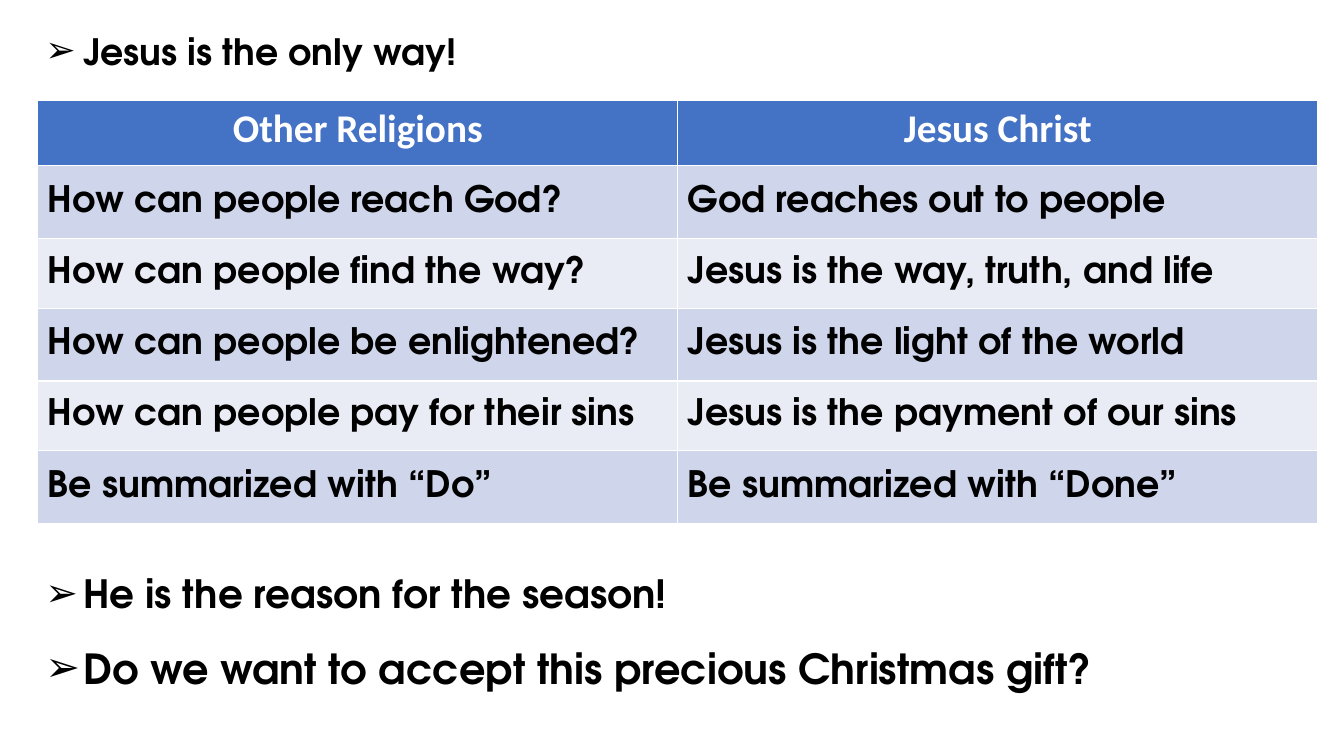
from lxml import etree
from pptx import Presentation
from pptx.dml.color import RGBColor
from pptx.enum.text import MSO_ANCHOR, MSO_AUTO_SIZE, PP_ALIGN
from pptx.oxml.ns import qn
from pptx.util import Cm, Pt

MIDDLE, TOP = MSO_ANCHOR.MIDDLE, MSO_ANCHOR.TOP
CENTER, LEFT = PP_ALIGN.CENTER, PP_ALIGN.LEFT
NO_FIT = MSO_AUTO_SIZE.NONE
HEAD_FONT, BODY_FONT = "Calibri", "TeX Gyre Adventor"
COLORS = {
    "head": "4472C4",
    "odd": "CFD5EA",
    "even": "E9EBF5",
    "white": "FFFFFF",
    "black": "000000",
}
# Text, size and space before, in points
POINTS = [
    ("Jesus is the only way!", 25.9, 10),
    ("He is the reason for the season!", 27.8, 362),
    ("Do we want to accept this precious Christmas gift?", 29.6, 26),
]
ROWS = [
    ("Other Religions", "Jesus Christ"),
    ("How can people reach God?", "God reaches out to people"),
    ("How can people find the way?", "Jesus is the way, truth, and life"),
    ("How can people be enlightened?", "Jesus is the light of the world"),
    ("How can people pay for their sins", "Jesus is the payment of our sins"),
    ("Be summarized with “Do”", "Be summarized with “Done”"),
]
HEIGHTS = [1.65, 1.85, 1.75, 1.83, 1.75, 1.85]


def color(name):
    return RGBColor.from_string(COLORS[name])


def add_run(para, text, size, font, tone):
    run = para.add_run()
    run.text = text
    run.font.size = Pt(size)
    run.font.name = font
    run.font.bold = True
    run.font.color.rgb = color(tone)


def set_bullet(para, char, indent):
    props = para._p.get_or_add_pPr()
    props.set("marL", str(indent))
    props.set("indent", str(-indent))
    etree.SubElement(props, qn("a:buFont")).set("typeface", "Arial")
    etree.SubElement(props, qn("a:buChar")).set("char", char)


def fill_list(body):
    body.left, body.top = Cm(0.89), Cm(0.81)
    body.width, body.height = Cm(32.26), Cm(18.01)
    frame = body.text_frame
    frame.auto_size = NO_FIT
    frame.vertical_anchor = TOP
    for i, (text, size, gap) in enumerate(POINTS):
        para = frame.add_paragraph() if i else frame.paragraphs[0]
        para.alignment = LEFT
        para.line_spacing = 0.8
        para.space_before = Pt(gap)
        set_bullet(para, "➢", Cm(0.95))
        add_run(para, text, size, BODY_FONT, "black")


def fill_cell(cell, text, row):
    para = cell.text_frame.paragraphs[0]
    cell.fill.solid()
    if row == 0:
        cell.fill.fore_color.rgb = color("head")
        para.alignment = CENTER
        add_run(para, text, 28, HEAD_FONT, "white")
    else:
        cell.fill.fore_color.rgb = color("odd" if row % 2 else "even")
        cell.vertical_anchor = MIDDLE
        add_run(para, text, 26, BODY_FONT, "black")


def add_grid(slide):
    frame = slide.shapes.add_table(
        len(ROWS), 2, Cm(0.95), Cm(2.52), Cm(32.26), Cm(sum(HEIGHTS)))
    table = frame.table
    for r, (texts, height) in enumerate(zip(ROWS, HEIGHTS)):
        table.rows[r].height = Cm(height)
        for c, text in enumerate(texts):
            fill_cell(table.cell(r, c), text, r)


def main():
    deck = Presentation()
    deck.slide_width, deck.slide_height = Cm(33.87), Cm(19.05)
    slide = deck.slides.add_slide(deck.slide_layouts[1])
    title = slide.shapes.title._element
    title.getparent().remove(title)
    fill_list(slide.placeholders[1])
    add_grid(slide)
    deck.save("out.pptx")


if __name__ == "__main__":
    main()
